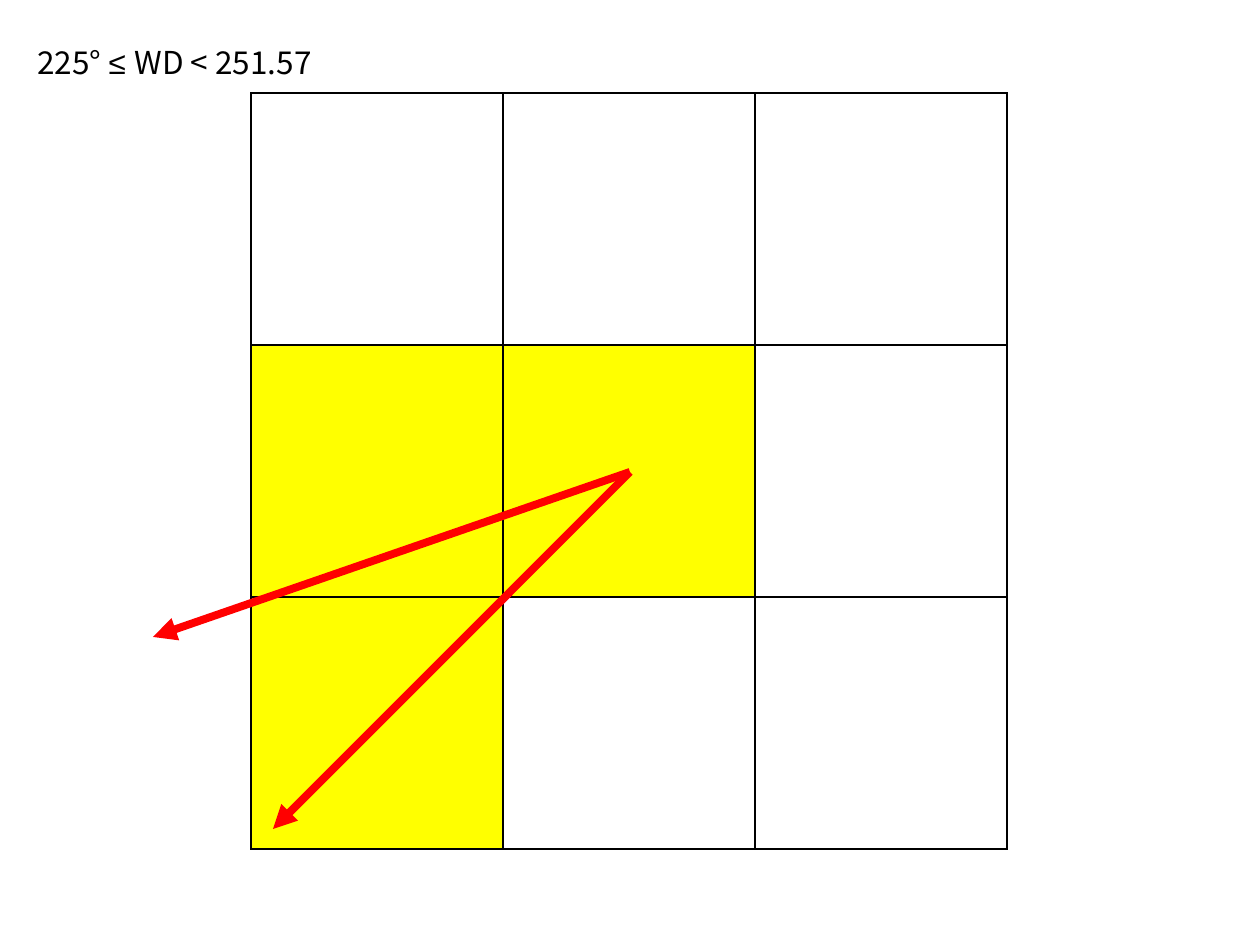
import pptx
import pptx.util
import pptx.dml.color
import pptx.enum.shapes
import pptx.enum.text
import pptx.oxml
import pptx.oxml.ns

BLACK = pptx.dml.color.RGBColor(0x00, 0x00, 0x00)
WHITE = pptx.dml.color.RGBColor(0xFF, 0xFF, 0xFF)
YELLOW = pptx.dml.color.RGBColor(0xFF, 0xFF, 0x00)
RED = pptx.dml.color.RGBColor(0xFF, 0x00, 0x00)

PX = 914400 // 126
SLIDE_SIZE = (1260, 945)
GRID_ORIGIN = (251, 93)
CELL = 252
GRID_FILLS = [
    [None, None, None],
    [YELLOW, YELLOW, WHITE],
    [YELLOW, None, WHITE],
]
LABEL_BOX = (25, 37, 320, 50)
LABEL_RUNS = [
    ("225° ", "Noto Sans CJK KR"),
    ("≤ ", "Arial"),
    ("WD < 251.57", "Noto Sans CJK KR"),
]
ARROW_START = (630, 472)
ARROW_ENDS = [(273, 829), (153, 637)]


def px(*lengths):
    return [length * PX for length in lengths]


def add_borders(cell):
    properties = cell._tc.get_or_add_tcPr()
    for index, side in enumerate(("lnL", "lnR", "lnT", "lnB")):
        border = pptx.oxml.parse_xml(
            f'<a:{side} {pptx.oxml.ns.nsdecls("a")} w="12700"><a:solidFill>'
            f'<a:srgbClr val="{BLACK}"/></a:solidFill></a:{side}>'
        )
        properties.insert(index, border)


def add_grid(slide):
    count = len(GRID_FILLS)
    size = count * CELL
    table = slide.shapes.add_table(count, count, *px(*GRID_ORIGIN, size, size)).table
    table.first_row = False
    table.horz_banding = False
    for row, fills in enumerate(GRID_FILLS):
        for column, color in enumerate(fills):
            cell = table.cell(row, column)
            if color is None:
                cell.fill.background()
            else:
                cell.fill.solid()
                cell.fill.fore_color.rgb = color
            add_borders(cell)


def add_label(slide):
    text_frame = slide.shapes.add_textbox(*px(*LABEL_BOX)).text_frame
    text_frame.word_wrap = False
    text_frame.auto_size = pptx.enum.text.MSO_AUTO_SIZE.SHAPE_TO_FIT_TEXT
    paragraph = text_frame.paragraphs[0]
    for text, font_name in LABEL_RUNS:
        run = paragraph.add_run()
        run.text = text
        run.font.name = font_name
        run.font.size = pptx.util.Pt(18)
        run.font.color.rgb = BLACK


def add_arrow(slide, end):
    arrow = slide.shapes.add_connector(
        pptx.enum.shapes.MSO_CONNECTOR.STRAIGHT, *px(*ARROW_START, *end)
    )
    arrow.line.color.rgb = RED
    arrow.line.width = pptx.util.Pt(4.5)
    namespace = pptx.oxml.ns.nsdecls("a")
    arrow.line._get_or_add_ln().append(
        pptx.oxml.parse_xml(f'<a:tailEnd {namespace} type="triangle"/>')
    )
    arrow._element.spPr.append(pptx.oxml.parse_xml(f"<a:effectLst {namespace}/>"))


def main():
    presentation = pptx.Presentation()
    presentation.slide_width, presentation.slide_height = px(*SLIDE_SIZE)
    slide = presentation.slides.add_slide(presentation.slide_layouts[6])
    add_grid(slide)
    add_label(slide)
    for end in ARROW_ENDS:
        add_arrow(slide, end)
    presentation.save("out.pptx")


if __name__ == "__main__":
    main()
